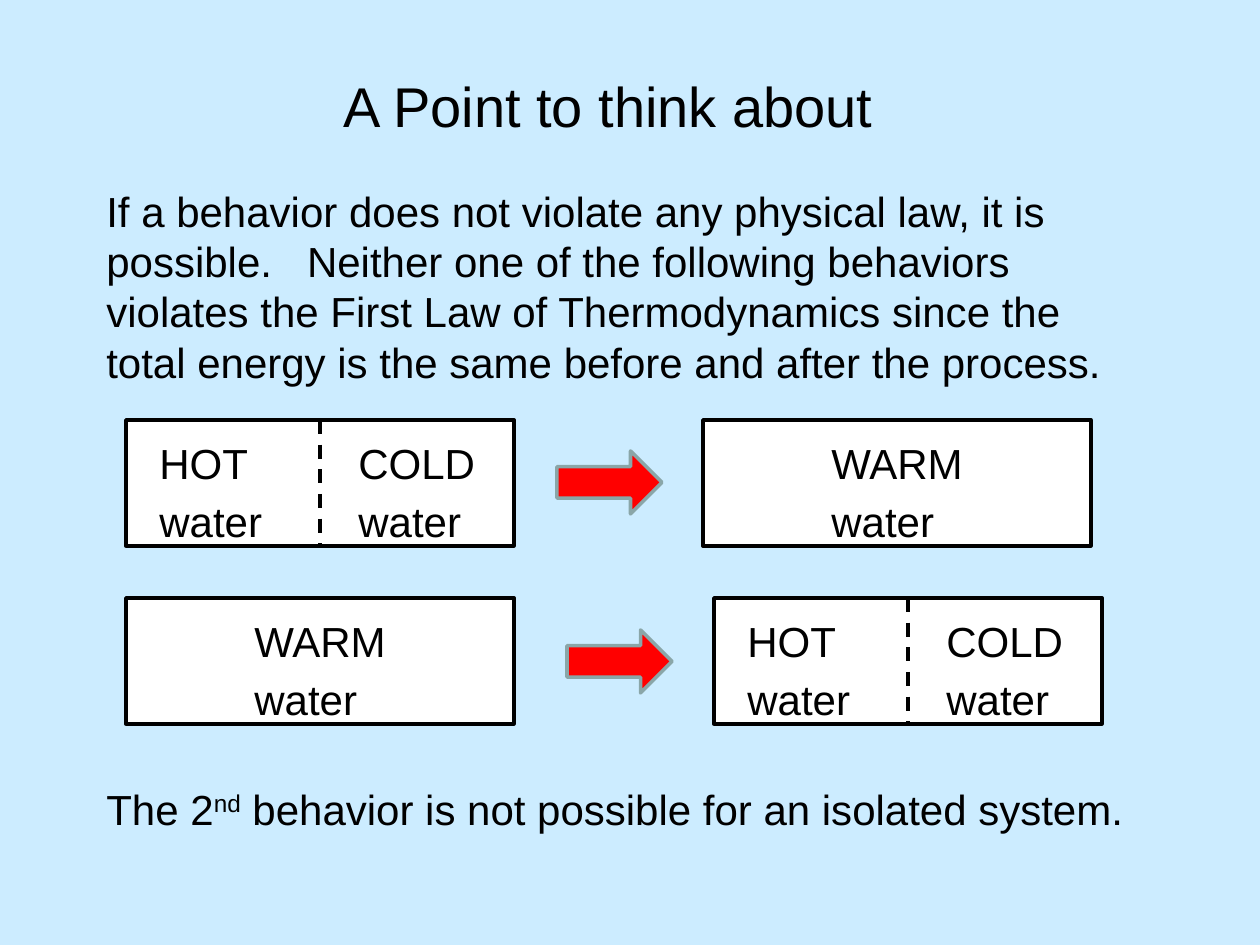
import pptx
import pptx.util
import pptx.dml.color
import pptx.enum.dml
import pptx.enum.shapes
import pptx.enum.text
from lxml import etree

PX = 914400 // 126
COLORS = {"sky": "CCECFF", "ink": "000000", "box": "FFFFFF",
          "arrow": "FF0000", "edge": "8AA6A8"}
SHAPES = pptx.enum.shapes.MSO_SHAPE
BOX_W, BOX_H = 388, 126


def px(*vals):
    return [v * PX for v in vals]


def color(name):
    return pptx.dml.color.RGBColor.from_string(COLORS[name])


def add_text(slide, at, paras, size=24, gap=4.8, center=False):
    """Add a text box; each paragraph is a list of (text, raised) runs."""
    frame = slide.shapes.add_textbox(*px(*at)).text_frame
    frame.word_wrap = True
    if center:
        frame.vertical_anchor = pptx.enum.text.MSO_ANCHOR.MIDDLE
    for i, runs in enumerate(paras):
        para = frame.add_paragraph() if i else frame.paragraphs[0]
        para.space_before = pptx.util.Pt(gap)
        if center:
            para.alignment = pptx.enum.text.PP_ALIGN.CENTER
        for words, raised in runs:
            run = para.add_run()
            run.text = words
            run.font.size = pptx.util.Pt(size)
            run.font.name = "Arial"
            run.font.color.rgb = color("ink")
            if raised:
                run.font._element.set("baseline", "30000")


def add_shape(slide, kind, at, fill, line):
    shape = slide.shapes.add_shape(kind, *px(*at))
    shape.shadow.inherit = False
    shape.fill.solid()
    shape.fill.fore_color.rgb = color(fill)
    shape.line.color.rgb = color(line)
    shape.line.width = pptx.util.Pt(2)
    return shape


def add_box(slide, x, y):
    return add_shape(slide, SHAPES.RECTANGLE, (x, y, BOX_W, BOX_H), "box", "ink")


def add_label(slide, x, y, w, state):
    add_text(slide, (x, y + 11, w, 73), [[(state, False)], [("water", False)]])


def add_split(slide, x, y):
    """Add a box of hot and cold water with a dashed wall between."""
    box = add_box(slide, x, y)
    add_label(slide, x + 21, y, 147, "HOT")
    add_label(slide, x + 220, y, 158, "COLD")
    mid = x + BOX_W // 2
    wall = slide.shapes.add_connector(
        pptx.enum.shapes.MSO_CONNECTOR.STRAIGHT, *px(mid, y, mid, y + BOX_H))
    wall.begin_connect(box, 0)
    wall.end_connect(box, 2)
    wall.line.color.rgb = color("ink")
    wall.line.width = pptx.util.Pt(2)
    wall.line.dash_style = pptx.enum.dml.MSO_LINE.DASH
    etree.SubElement(wall._element.spPr, pptx.oxml.ns.qn("a:effectLst"))


def add_mixed(slide, x, y):
    add_box(slide, x, y)
    add_label(slide, x + 116, y, 200, "WARM")


def add_arrow(slide, x, y):
    add_shape(slide, SHAPES.RIGHT_ARROW, (x, y, 105, 63), "arrow", "edge")


def main():
    deck = pptx.Presentation()
    deck.slide_width, deck.slide_height = px(1260, 945)
    slide = deck.slides.add_slide(deck.slide_layouts[6])
    slide.background.fill.solid()
    slide.background.fill.fore_color.rgb = color("sky")

    add_text(slide, (73, 53, 1071, 105), [[("A Point to think about", False)]],
             size=32, gap=0, center=True)
    add_text(slide, (94, 179, 1061, 168), [[(
        "If a behavior does not violate any physical law, it is possible.   "
        "Neither one of the following behaviors violates the First Law of "
        "Thermodynamics since the total energy is the same before and after "
        "the process.", False)]])

    add_split(slide, 126, 420)
    add_arrow(slide, 557, 451)
    add_mixed(slide, 703, 420)

    add_mixed(slide, 126, 598)
    add_arrow(slide, 567, 630)
    add_split(slide, 714, 598)

    add_text(slide, (94, 777, 1061, 126), [[
        ("The 2", False), ("nd", True),
        (" behavior is not possible for an isolated system.", False)]])
    deck.save("out.pptx")


if __name__ == "__main__":
    main()
